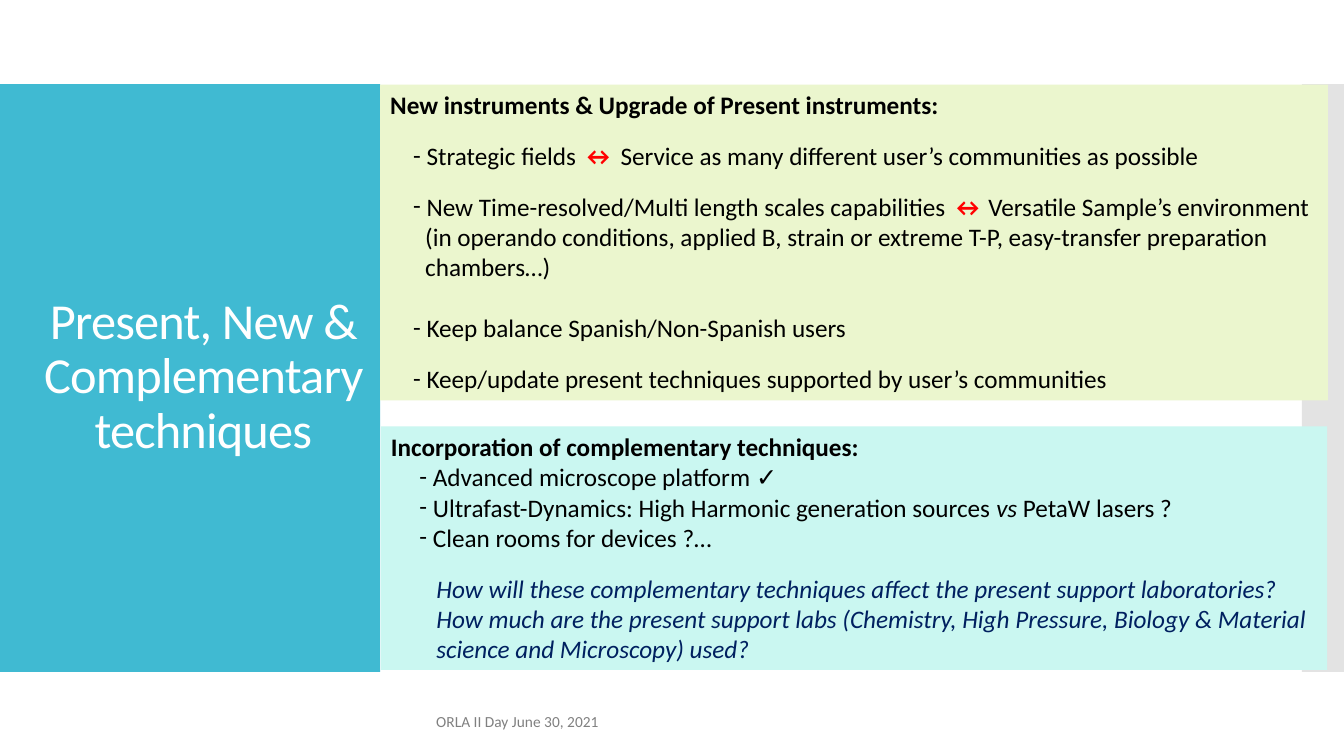
from dataclasses import dataclass

from lxml.etree import SubElement
from pptx import Presentation
from pptx.dml.color import RGBColor
from pptx.enum.shapes import MSO_SHAPE
from pptx.enum.text import MSO_ANCHOR, MSO_AUTO_SIZE, PP_ALIGN
from pptx.oxml.ns import qn
from pptx.util import Pt


@dataclass(frozen=True)
class Theme:
    font: str = "Calibri"
    title_size: float = 36
    body_size: float = 18
    footer_size: float = 11
    white: str = "FFFFFF"
    black: str = "000000"
    grey: str = "808080"
    red: str = "FF0000"
    navy: str = "002060"
    teal: str = "40BAD2"
    band_grey: str = "C8C8C8"
    lime: str = "EBF6CE"
    aqua: str = "CAF7F1"


THEME = Theme()
BULLET_HANG = 9.6
GAP = 14.65
WIDE_GAP = 22


@dataclass(frozen=True)
class Box:
    left: float
    top: float
    width: float
    height: float


@dataclass(frozen=True)
class Run:
    text: str
    color: str = THEME.black
    bold: bool = False
    italic: bool = False
    size: float = THEME.body_size


@dataclass(frozen=True)
class Line:
    runs: tuple[Run, ...]
    margin: float = 0
    before: float = 0
    bullet: bool = False


@dataclass(frozen=True)
class Band:
    box: Box
    fill: str
    opacity: int = 100


@dataclass(frozen=True)
class Panel:
    placeholder: int
    box: Box
    fill: str
    lines: tuple[Line, ...]


ARROW = Run("↔", THEME.red, bold=True)

BANDS = (
    Band(Box(0, 60, 271.5, 420), THEME.teal),
    Band(Box(930, 60, 30, 420), THEME.band_grey, opacity=50),
)

PANELS = (
    Panel(1, Box(271.5, 60.5, 677, 225.5), THEME.lime, (
        Line((Run("New instruments & Upgrade of Present instruments:", bold=True),)),
        Line((Run("Strategic fields "), ARROW,
              Run(" Service as many different user’s communities as possible")),
             26, GAP, bullet=True),
        Line((Run("New Time-resolved/Multi length scales capabilities "), ARROW,
              Run(" ", size=12), Run("Versatile Sample’s environment")),
             26, GAP, bullet=True),
        Line((Run("(in operando conditions, applied B, strain or extreme T-P, "
                  "easy-transfer preparation chambers…)"),), 25),
        Line((Run("Keep balance Spanish/Non-Spanish users"),), 26, WIDE_GAP, bullet=True),
        Line((Run("Keep/update present techniques supported by user’s communities"),),
             26, GAP, bullet=True),
    )),
    Panel(2, Box(272, 304.5, 676, 174), THEME.aqua, (
        Line((Run("Incorporation of complementary techniques:", bold=True),)),
        Line((Run("Advanced microscope platform ✓"),), 30, bullet=True),
        Line((Run("Ultrafast-Dynamics: High Harmonic generation sources "),
              Run("vs ", italic=True), Run("PetaW lasers ?")), 30, bullet=True),
        Line((Run("Clean rooms for devices ?…"),), 30, bullet=True),
        Line((Run("How will these complementary techniques affect "
                  "the present support laboratories?", THEME.navy, italic=True),), 32.5, GAP),
        Line((Run("How much are the present support labs (Chemistry, High Pressure, "
                  "Biology & Material science and Microscopy) used?",
                  THEME.navy, italic=True),), 32.5),
    )),
)


def place(shape, box: Box) -> None:
    shape.left, shape.top = Pt(box.left), Pt(box.top)
    shape.width, shape.height = Pt(box.width), Pt(box.height)


def paint(shape, color: str) -> None:
    shape.fill.solid()
    shape.fill.fore_color.rgb = RGBColor.from_string(color)


def prepare_text(shape, anchor: MSO_ANCHOR):
    """Fix wrapping and anchoring, and return the first paragraph."""
    frame = shape.text_frame
    frame.word_wrap = True
    frame.auto_size = MSO_AUTO_SIZE.NONE
    frame.vertical_anchor = anchor
    return frame.paragraphs[0]


def add_run(paragraph, run: Run):
    text_run = paragraph.add_run()
    text_run.text = run.text
    font = text_run.font
    font.name, font.size = THEME.font, Pt(run.size)
    font.bold, font.italic = run.bold, run.italic
    font.color.rgb = RGBColor.from_string(run.color)
    return text_run


def write_line(paragraph, line: Line) -> None:
    paragraph.alignment = PP_ALIGN.LEFT
    paragraph.space_before = Pt(line.before)
    properties = paragraph._p.get_or_add_pPr()
    properties.set("marL", str(Pt(line.margin)))
    properties.set("indent", str(-Pt(BULLET_HANG) if line.bullet else 0))
    if line.bullet:
        SubElement(properties, qn("a:buFont"), typeface=THEME.font)
        SubElement(properties, qn("a:buChar"), char="-")
    else:
        SubElement(properties, qn("a:buNone"))
    for run in line.runs:
        add_run(paragraph, run)


def add_band(slide, band: Band) -> None:
    """Draw a full colour band behind the title and the panels."""
    shape = slide.shapes.add_shape(MSO_SHAPE.RECTANGLE, 0, 0, 0, 0)
    place(shape, band.box)
    paint(shape, band.fill)
    shape.line.fill.background()
    shape.shadow.inherit = False
    if band.opacity < 100:
        color = shape.element.spPr.find(qn("a:solidFill"))[0]
        SubElement(color, qn("a:alpha"), val=str(band.opacity * 1000))
    slide.shapes.title.element.addprevious(shape.element)


def write_title(slide) -> None:
    title = slide.shapes.title
    place(title, Box(20, 88.5, 250.5, 362))
    paragraph = prepare_text(title, MSO_ANCHOR.MIDDLE)
    paragraph.alignment = PP_ALIGN.CENTER
    paragraph.line_spacing = 0.9
    text_run = add_run(paragraph, Run("Present, New & Complementary techniques",
                                      THEME.white, size=THEME.title_size))
    text_run.font._element.set("spc", "-60")


def fill_panel(slide, panel: Panel) -> None:
    shape = slide.placeholders[panel.placeholder]
    place(shape, panel.box)
    paint(shape, panel.fill)
    paragraph = prepare_text(shape, MSO_ANCHOR.TOP)
    for index, line in enumerate(panel.lines):
        write_line(paragraph if index == 0 else shape.text_frame.add_paragraph(), line)


def add_footer(slide) -> None:
    footer = slide.shapes.add_textbox(0, 0, 0, 0)
    place(footer, Box(304.5, 500.5, 465, 29))
    paragraph = prepare_text(footer, MSO_ANCHOR.MIDDLE)
    add_run(paragraph, Run("ORLA II Day June 30, 2021", THEME.grey, size=THEME.footer_size))


def main() -> None:
    presentation = Presentation()
    presentation.slide_width, presentation.slide_height = Pt(960), Pt(540)
    two_content = presentation.slide_layouts.get_by_name("Two Content")
    slide = presentation.slides.add_slide(two_content)
    for band in BANDS:
        add_band(slide, band)
    write_title(slide)
    for panel in PANELS:
        fill_panel(slide, panel)
    add_footer(slide)
    presentation.save("out.pptx")


if __name__ == "__main__":
    main()
